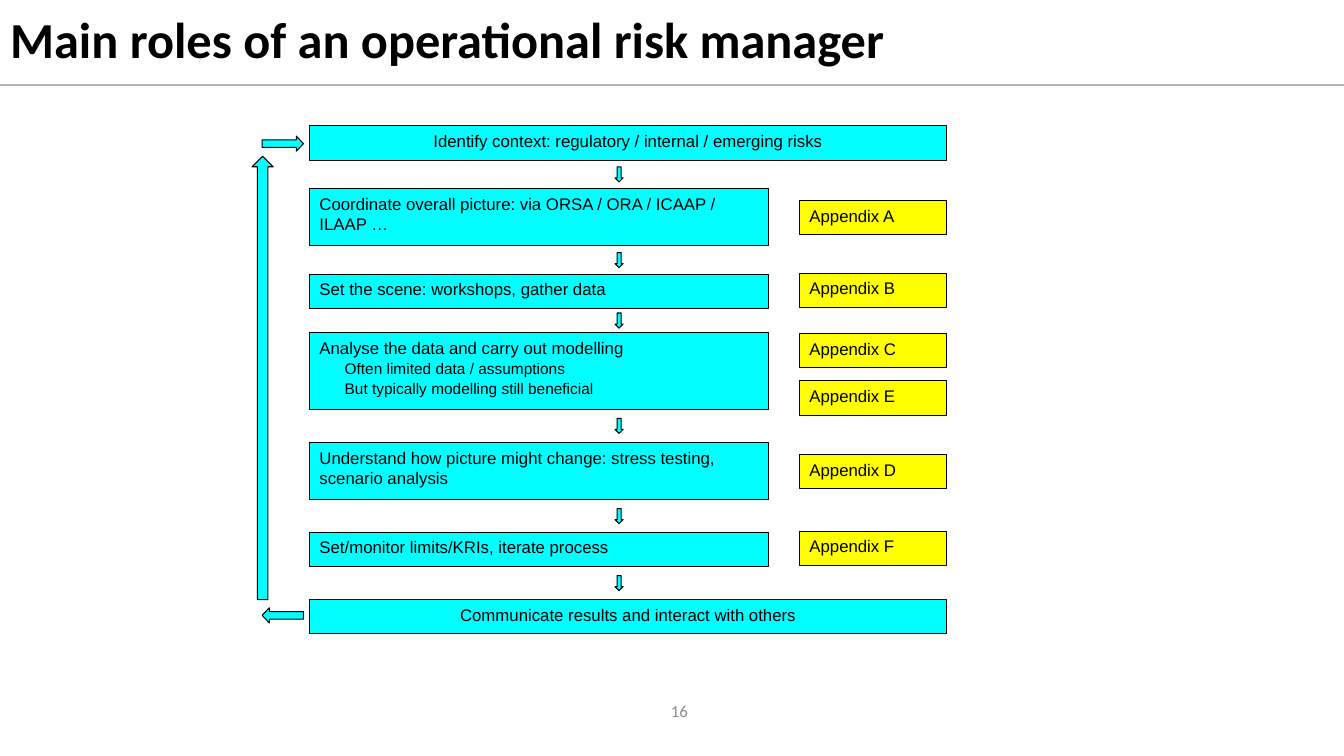
from dataclasses import dataclass

from lxml import etree
from pptx import Presentation
from pptx.dml.color import RGBColor
from pptx.enum.shapes import MSO_CONNECTOR, MSO_SHAPE
from pptx.enum.text import MSO_ANCHOR, PP_ALIGN
from pptx.oxml.ns import qn
from pptx.util import Inches, Pt

RECTANGLE = MSO_SHAPE.RECTANGLE
DOWN, UP = MSO_SHAPE.DOWN_ARROW, MSO_SHAPE.UP_ARROW
LEFT, RIGHT = MSO_SHAPE.LEFT_ARROW, MSO_SHAPE.RIGHT_ARROW
STRAIGHT = MSO_CONNECTOR.STRAIGHT
TOP, MIDDLE = MSO_ANCHOR.TOP, MSO_ANCHOR.MIDDLE
ALIGN_LEFT, ALIGN_CENTER, ALIGN_RIGHT = PP_ALIGN.LEFT, PP_ALIGN.CENTER, PP_ALIGN.RIGHT


@dataclass(frozen=True)
class Theme:
    text: RGBColor = RGBColor(0x00, 0x00, 0x00)
    step: RGBColor = RGBColor(0x00, 0xFF, 0xFF)
    appendix: RGBColor = RGBColor(0xFF, 0xFF, 0x00)
    rule: RGBColor = RGBColor(0xB2, 0xB2, 0xB2)
    number: RGBColor = RGBColor(0x8C, 0x8C, 0x8C)
    heading_font: str = "Calibri"
    body_font: str = "Arial"
    title_size: int = 36
    body_size: int = 12
    detail_size: int = 11


THEME = Theme()
SLIDE_WIDTH, SLIDE_HEIGHT = 13.33, 7.5
ROW_HEIGHT = 0.34
APPENDIX_WIDTH = 1.46
STEP_WIDTH = 4.55
ARROW_WIDTH, ARROW_HEIGHT = 0.08, 0.15
RETURN_WIDTH = 0.41

STEPS = [
    (0, ROW_HEIGHT, ["Identify context: regulatory / internal / emerging risks"], []),
    (0.62, 0.57, ["Coordinate overall picture: via ORSA / ORA / ICAAP / ILAAP …"],
     [("Appendix A", 0.74)]),
    (1.47, ROW_HEIGHT, ["Set the scene: workshops, gather data"], [("Appendix B", 1.46)]),
    (2.05, 0.76, ["Analyse the data and carry out modelling",
                  "Often limited data / assumptions",
                  "But typically modelling still beneficial"],
     [("Appendix C", 2.06), ("Appendix E", 2.53)]),
    (3.14, 0.57, ["Understand how picture might change: stress testing, scenario analysis"],
     [("Appendix D", 3.26)]),
    (4.03, ROW_HEIGHT, ["Set/monitor limits/KRIs, iterate process"], [("Appendix F", 4.02)]),
    (4.7, ROW_HEIGHT, ["Communicate results and interact with others"], []),
]


def add_text(paragraph, text, font, size, color, bold=False):
    run = paragraph.add_run()
    run.text = text
    run.font.name = font
    run.font.size = Pt(size)
    run.font.bold = bold
    run.font.color.rgb = color


def add_block(slide, kind, left, top, width, height, fill):
    shape = slide.shapes.add_shape(
        kind, Inches(left), Inches(top), Inches(width), Inches(height))
    shape.shadow.inherit = False
    shape.fill.solid()
    shape.fill.fore_color.rgb = fill
    shape.line.color.rgb = THEME.text
    shape.line.width = Pt(0.75)
    return shape


def add_box(slide, left, top, width, height, fill, lines, alignment=ALIGN_LEFT):
    frame = add_block(slide, RECTANGLE, left, top, width, height, fill).text_frame
    frame.word_wrap = True
    frame.vertical_anchor = TOP
    for index, line in enumerate(lines):
        paragraph = frame.add_paragraph() if index else frame.paragraphs[0]
        paragraph.alignment = alignment
        if index:
            properties = paragraph._p.get_or_add_pPr()
            properties.set("marL", str(Inches(0.5)))
            properties.set("indent", str(Inches(-0.25)))
            paragraph.line_spacing = 1.07
        size = THEME.detail_size if index else THEME.body_size
        add_text(paragraph, line, THEME.body_font, size, THEME.text)


def add_header(slide, left, top, width, height):
    title = slide.shapes.title
    title.left, title.top = Inches(left), Inches(top)
    title.width, title.height = Inches(width), Inches(height)
    title.text_frame.vertical_anchor = MIDDLE
    paragraph = title.text_frame.paragraphs[0]
    paragraph.alignment = ALIGN_LEFT
    paragraph.line_spacing = 0.9
    add_text(paragraph, "Main roles of an operational risk manager",
             THEME.heading_font, THEME.title_size, THEME.text, bold=True)
    bottom = Inches(top + height + 0.01)
    rule = slide.shapes.add_connector(
        STRAIGHT, Inches(left), bottom, Inches(left + width), bottom)
    rule.line.color.rgb = THEME.rule
    rule.line.width = Pt(1.5)
    etree.SubElement(rule._element.spPr, qn("a:effectLst"))


def add_process(slide, left, top, width):
    appendix_left = left + width - APPENDIX_WIDTH
    arrow_left = left + width / 2 - 0.13
    previous_bottom = None
    for offset, height, lines, appendices in STEPS:
        step_width = STEP_WIDTH if appendices else width
        alignment = ALIGN_LEFT if appendices else ALIGN_CENTER
        add_box(slide, left, top + offset, step_width, height, THEME.step, lines, alignment)
        for label, appendix_offset in appendices:
            add_box(slide, appendix_left, top + appendix_offset,
                    APPENDIX_WIDTH, ROW_HEIGHT, THEME.appendix, [label])
        if previous_bottom is not None:
            gap_middle = top + (previous_bottom + offset) / 2
            add_block(slide, DOWN, arrow_left, gap_middle - ARROW_HEIGHT / 2,
                      ARROW_WIDTH, ARROW_HEIGHT, THEME.step)
        previous_bottom = offset + height


def add_feedback_loop(slide, left, top, width, height):
    stem_width = 0.21
    return_left = left + width - RETURN_WIDTH
    add_block(slide, UP, left, top + 0.2, stem_width, height - 0.43, THEME.step)
    for kind, arrow_top in ((RIGHT, top), (LEFT, top + height - ARROW_HEIGHT)):
        arrow = add_block(slide, kind, return_left, arrow_top,
                          RETURN_WIDTH, ARROW_HEIGHT, THEME.step)
        arrow.adjustments[1] = 0.474


def add_page_number(slide, left, top, width, height):
    box = slide.shapes.add_textbox(
        Inches(left), Inches(top), Inches(width), Inches(height))
    box.text_frame.word_wrap = True
    box.text_frame.vertical_anchor = MIDDLE
    paragraph = box.text_frame.paragraphs[0]
    paragraph.alignment = ALIGN_RIGHT
    add_text(paragraph, "16", THEME.heading_font, THEME.body_size, THEME.number)


def main():
    presentation = Presentation()
    presentation.slide_width = Inches(SLIDE_WIDTH)
    presentation.slide_height = Inches(SLIDE_HEIGHT)
    slide = presentation.slides.add_slide(presentation.slide_layouts[5])
    add_header(slide, 0, 0, SLIDE_WIDTH, 0.83)
    add_process(slide, 3.07, 1.25, 6.32)
    add_feedback_loop(slide, 2.5, 1.35, 0.51, 4.83)
    add_page_number(slide, 6.4, 6.85, 0.52, 0.4)
    presentation.save("out.pptx")


if __name__ == "__main__":
    main()
